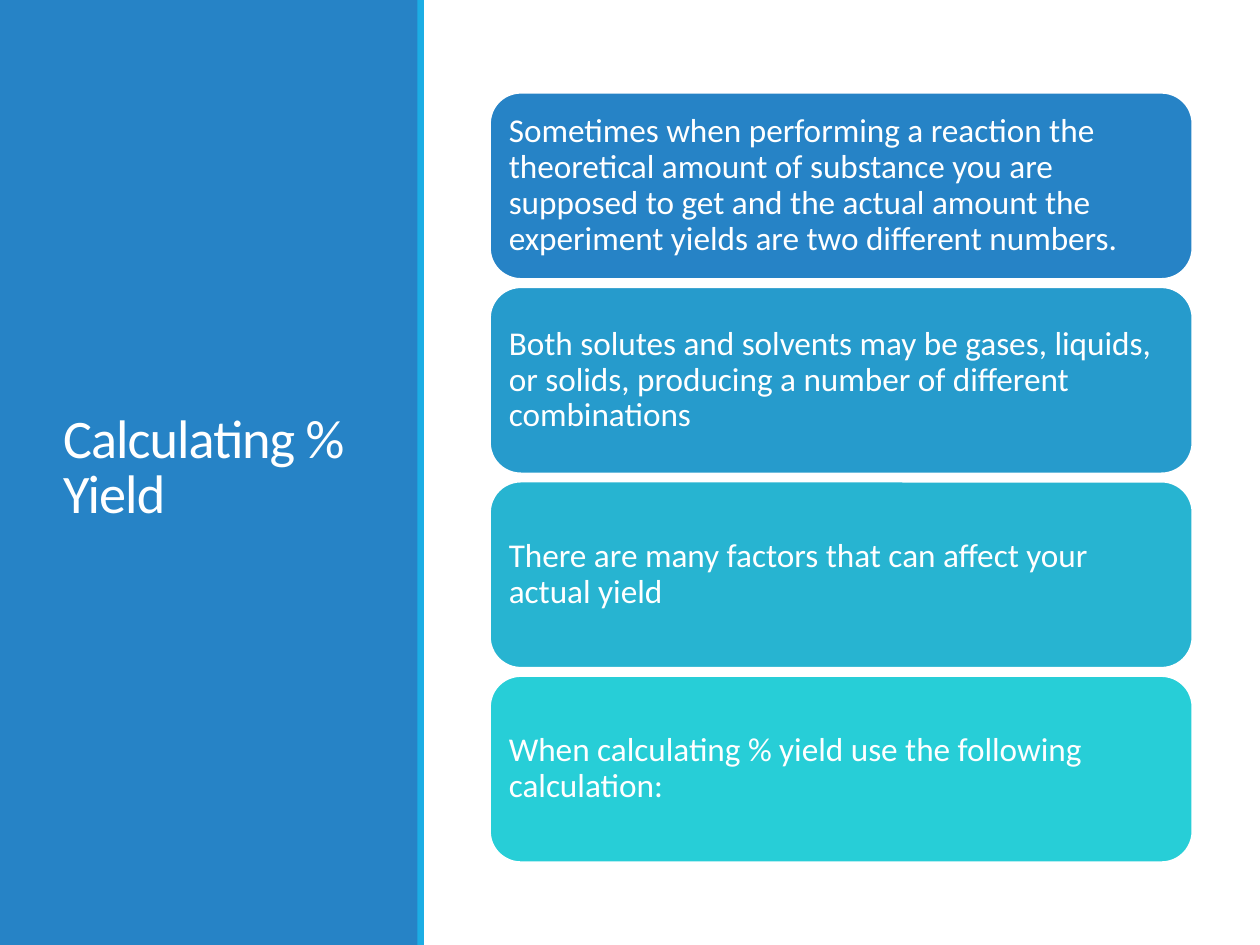
"""Build the percent yield slide: a title panel beside four stacked cards."""
from dataclasses import dataclass

from pptx import Presentation
from pptx.dml.color import RGBColor as Color
from pptx.enum.shapes import MSO_SHAPE as Shape
from pptx.enum.text import MSO_ANCHOR as Anchor, MSO_AUTO_SIZE as AutoSize, PP_ALIGN as Align
from pptx.util import Pt


@dataclass(frozen=True)
class Theme:
    font: str = "Calibri"
    title_size: float = 31
    card_size: float = 19
    white: str = "FFFFFF"
    panel: str = "2683C6"
    accent: str = "1CADE4"
    cards: tuple = ("2683C6", "269BCC", "27B4D1", "27CED7")


theme = Theme()
CARD_LEFT, CARD_TOP, CARD_WIDTH, CARD_HEIGHT, CARD_PITCH = 279.9, 52.9, 401.6, 106.6, 111.1
CARD_TEXTS = (
    "Sometimes when performing a reaction the theoretical amount of substance you are "
    "supposed to get and the actual amount the experiment yields are two different numbers.",
    "Both solutes and solvents may be gases, liquids, or solids, producing a number of "
    "different combinations",
    "There are many factors that can affect your actual yield",
    "When calculating % yield use the following calculation:",
)


def add_block(kind, left, top, width, height, fill):
    block = page.shapes.add_shape(kind, Pt(left), Pt(top), Pt(width), Pt(height))
    block.shadow.inherit = False
    block.fill.solid()
    block.fill.fore_color.rgb = Color.from_string(fill)
    block.line.fill.background()
    return block


def write_text(box, text, size, line_spacing):
    frame = box.text_frame
    frame.word_wrap = True
    frame.auto_size = AutoSize.NONE
    frame.vertical_anchor = Anchor.MIDDLE
    para = frame.paragraphs[0]
    span = para.add_run()
    span.text = text
    para.alignment = Align.LEFT
    para.line_spacing = line_spacing
    para.font.name = theme.font
    para.font.size = Pt(size)
    para.font.color.rgb = Color.from_string(theme.white)
    return span


deck = Presentation()
deck.slide_width, deck.slide_height = Pt(720), Pt(540)
page = deck.slides.add_slide(deck.slide_layouts[5])
page.background.fill.solid()
page.background.fill.fore_color.rgb = Color.from_string(theme.white)

title = page.shapes.title
panel = add_block(Shape.RECTANGLE, 0, 0, 239, 540, theme.panel)
title._element.addprevious(panel._element)
title.left, title.top, title.width, title.height = Pt(28.8), Pt(41), Pt(182.2), Pt(454.3)
title_span = write_text(title, "Calculating % Yield", theme.title_size, 0.85)
title_span._r.get_or_add_rPr().set("spc", "-50")

add_block(Shape.RECTANGLE, 238.5, 0, 3.8, 540, theme.accent)

for index, (text, fill) in enumerate(zip(CARD_TEXTS, theme.cards)):
    card = add_block(Shape.ROUNDED_RECTANGLE, CARD_LEFT, CARD_TOP + index * CARD_PITCH,
                     CARD_WIDTH, CARD_HEIGHT, fill)
    card.line.color.rgb = Color.from_string(theme.white)
    card.line.width = Pt(1.25)
    frame = card.text_frame
    frame.margin_left = frame.margin_right = frame.margin_top = frame.margin_bottom = Pt(5.7)
    write_text(card, text, theme.card_size, 0.9)

deck.save("out.pptx")
